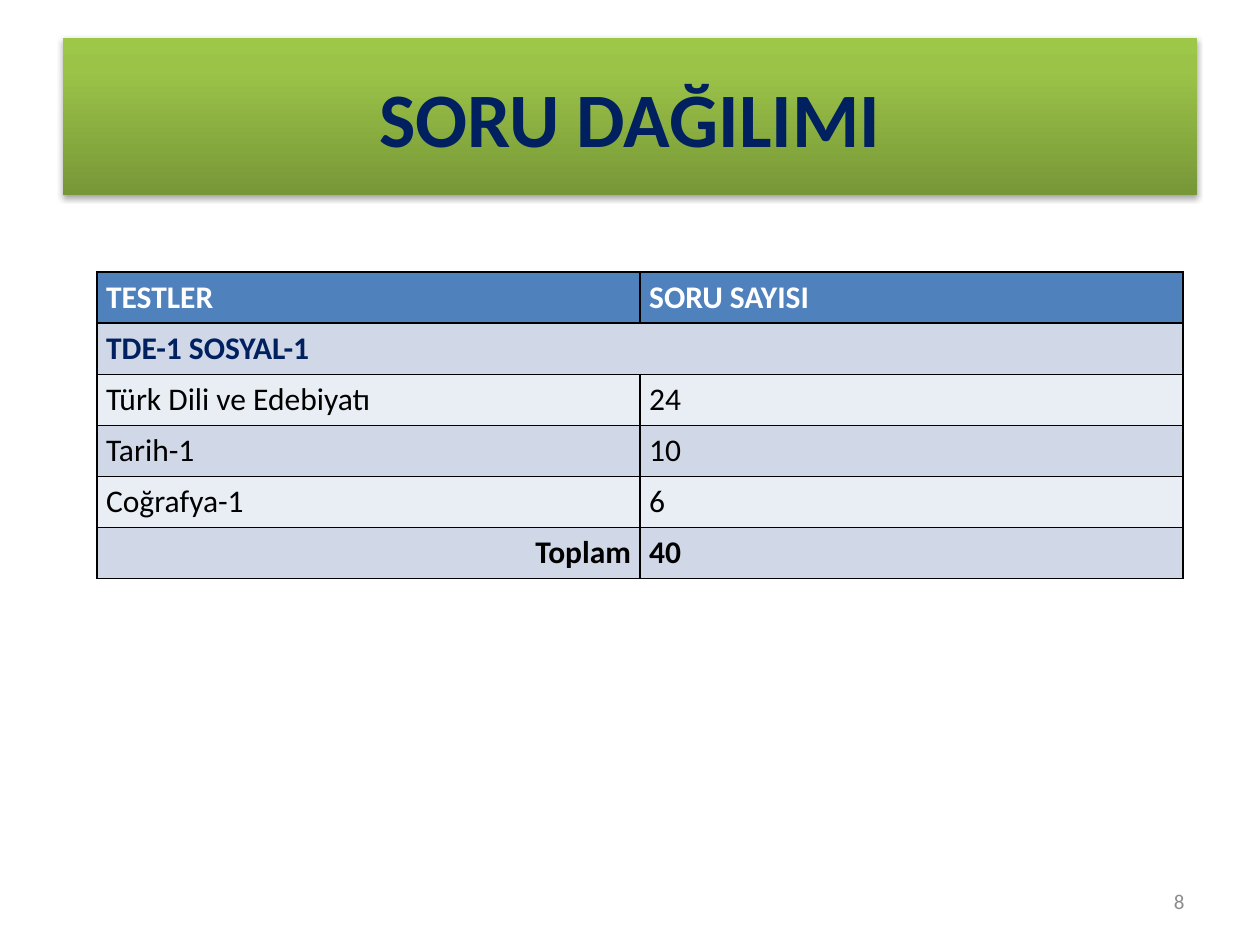
"""Build the SORU DAĞILIMI slide: a title banner, a table of question counts and a page number."""
from lxml import etree
from pptx import Presentation
from pptx.dml.color import RGBColor
from pptx.enum.shapes import MSO_SHAPE
from pptx.enum.text import MSO_ANCHOR, PP_ALIGN
from pptx.oxml import parse_xml
from pptx.oxml.ns import nsdecls, qn
from pptx.util import Pt

LEFT, CENTER, RIGHT = PP_ALIGN.LEFT, PP_ALIGN.CENTER, PP_ALIGN.RIGHT
MIDDLE = MSO_ANCHOR.MIDDLE
RECTANGLE = MSO_SHAPE.RECTANGLE

COLORS = {
    "navy": "002060", "white": "FFFFFF", "black": "000000", "gray": "8C8C8C",
    "header": "4F81BD", "band_dark": "D0D8E8", "band_light": "E9EDF4",
    "green_dark": "779737", "green": "9BC348", "green_light": "9DC746",
}


def write(frame, text, color, size, bold=False, align=LEFT):
    paragraph = frame.paragraphs[0]
    paragraph.alignment = align
    run = paragraph.add_run()
    run.text = text
    for name, value in {"name": "Calibri", "size": Pt(size), "bold": bold}.items():
        setattr(run.font, name, value)
    run.font.color.rgb = RGBColor.from_string(COLORS[color])


def add_borders(cell):
    properties = cell._tc.get_or_add_tcPr()
    for index, side in enumerate(("lnL", "lnR", "lnT", "lnB")):
        properties.insert(index, parse_xml(
            f'<a:{side} {nsdecls("a")} w="12700"><a:solidFill>'
            f'<a:srgbClr val="{COLORS["black"]}"/></a:solidFill></a:{side}>'))


presentation = Presentation()
presentation.slide_width, presentation.slide_height = Pt(720), Pt(540)
slide = presentation.slides.add_slide(presentation.slide_layouts[6])

rows = [
    ("TESTLER", "SORU SAYISI"),
    ("TDE-1 SOSYAL-1", ""),
    ("Türk Dili ve Edebiyatı", "24"),
    ("Tarih-1", "10"),
    ("Coğrafya-1", "6"),
    ("Toplam", "40"),
]
HEADER, GROUP, TOTAL = 0, 1, len(rows) - 1
row_height = 29.2
distribution = slide.shapes.add_table(
    len(rows), 2, Pt(55.44), Pt(155.52), Pt(620.64), Pt(row_height * len(rows))).table
cell_format = {"margin_left": Pt(5.2), "margin_right": Pt(5.2),
               "margin_top": Pt(3.6), "margin_bottom": Pt(3.6)}
text_colors = {HEADER: "white", GROUP: "navy"}

for row, texts in enumerate(rows):
    distribution.rows[row].height = Pt(row_height)
    band = "header" if row == HEADER else ("band_light", "band_dark")[row % 2]
    for column, text in enumerate(texts):
        cell = distribution.cell(row, column)
        for name, value in cell_format.items():
            setattr(cell, name, value)
        cell.fill.solid()
        cell.fill.fore_color.rgb = RGBColor.from_string(COLORS[band])
        add_borders(cell)
        if text:
            write(cell.text_frame, text, text_colors.get(row, "black"), 18,
                  bold=row in (HEADER, GROUP, TOTAL),
                  align=RIGHT if (row, column) == (TOTAL, 0) else LEFT)
distribution.cell(GROUP, 0).merge(distribution.cell(GROUP, 1))

banner = slide.shapes.add_shape(RECTANGLE, Pt(36), Pt(21.6), Pt(648), Pt(90))
banner.line.fill.background()
banner.fill.gradient()
banner.fill.gradient_angle = 90
stops = banner._element.spPr.find(".//" + qn("a:gsLst"))
for stop in list(stops):
    stops.remove(stop)
for position, color in ((0, "green_dark"), (80, "green"), (100, "green_light")):
    stop = etree.SubElement(stops, qn("a:gs"), pos=str(position * 1000))
    etree.SubElement(stop, qn("a:srgbClr"), val=COLORS[color])
banner.shadow.inherit = False
banner._element.spPr.find(qn("a:effectLst")).append(parse_xml(
    f'<a:outerShdw {nsdecls("a")} blurRad="{Pt(3.1)}" dist="{Pt(1.8)}" dir="5400000" rotWithShape="0">'
    f'<a:srgbClr val="{COLORS["black"]}"><a:alpha val="35000"/></a:srgbClr></a:outerShdw>'))
banner.text_frame.vertical_anchor = MIDDLE
write(banner.text_frame, "SORU DAĞILIMI", "navy", 44, bold=True, align=CENTER)

page_number = slide.shapes.add_textbox(Pt(516), Pt(500.5), Pt(168), Pt(28.75)).text_frame
page_number.word_wrap = True
page_number.vertical_anchor = MIDDLE
write(page_number, "8", "gray", 12, align=RIGHT)

presentation.save("out.pptx")
